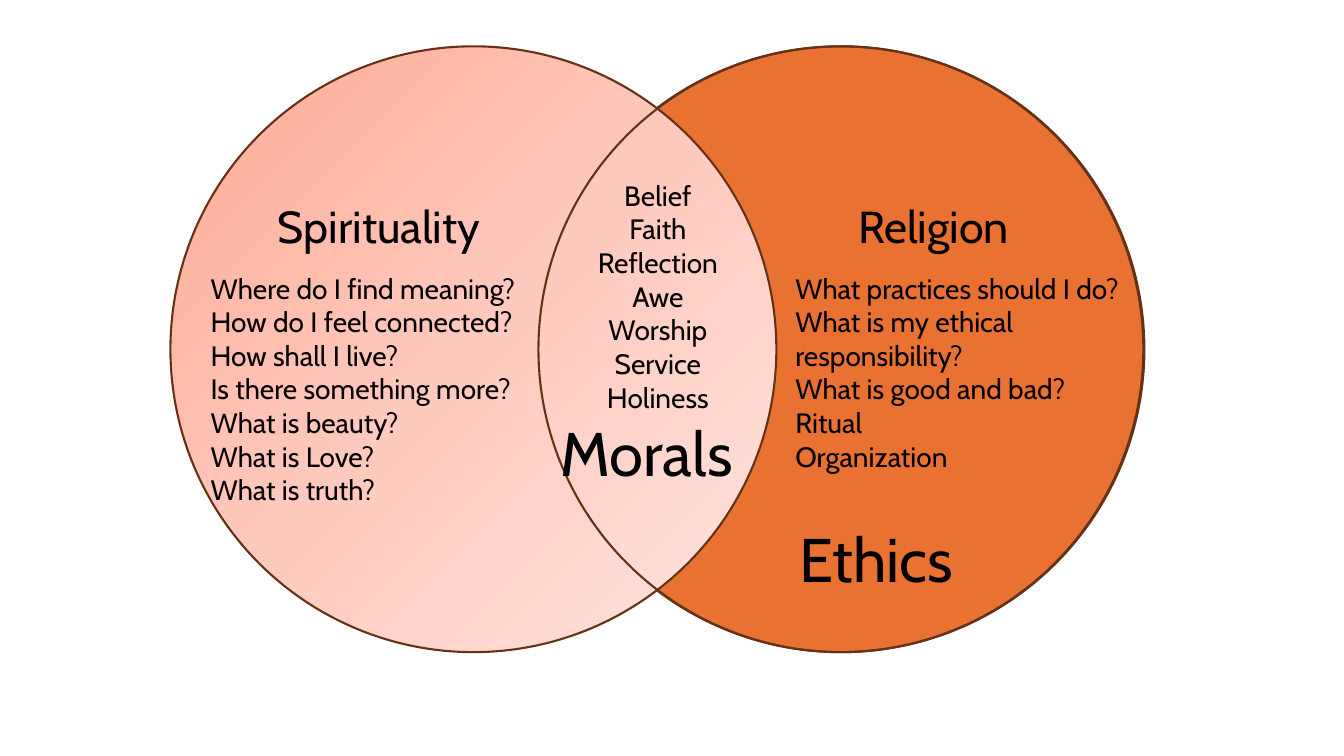
from lxml import etree
from pptx import Presentation
from pptx.dml.color import RGBColor
from pptx.enum.shapes import MSO_SHAPE
from pptx.enum.text import MSO_AUTO_SIZE, PP_ALIGN
from pptx.oxml.ns import qn
from pptx.util import Pt

PX = 9144  # EMU per px, 100 px to the inch
OVAL = MSO_SHAPE.OVAL
LEFT, CENTER = PP_ALIGN.LEFT, PP_ALIGN.CENTER
GROW = MSO_AUTO_SIZE.SHAPE_TO_FIT_TEXT

COLORS = {
    "religion": "E97132",
    "outline": "663216",
    "text": "000000",
    "glow_dark": "FFAA94",
    "glow_mid": "FFCABE",
    "glow_light": "FFE4DF",
}
GLOW = [(0, "glow_dark"), (50, "glow_mid"), (100, "glow_light")]


class Venn:
    font = "Cabin"
    diameter = 601
    top = 46

    def __init__(self, slide):
        self.s = slide

    def color(self, name):
        return RGBColor.from_string(COLORS[name])

    def circle(self, left, fill=None, stops=None):
        size = self.diameter * PX
        sp = self.s.shapes.add_shape(OVAL, left * PX, self.top * PX, size, size)
        sp.shadow.inherit = False
        sp.line.color.rgb = self.color("outline")
        sp.line.width = Pt(1.5)
        if fill:
            sp.fill.solid()
            sp.fill.fore_color.rgb = self.color(fill)
        else:
            sp.fill.background()
        if stops:
            self.radial(sp, stops)

    def radial(self, sp, stops):
        """Gradient spreading from the top left corner."""
        grad = etree.Element(qn("a:gradFill"), rotWithShape="1")
        gs_list = etree.SubElement(grad, qn("a:gsLst"))
        for percent, name in stops:
            gs = etree.SubElement(gs_list, qn("a:gs"), pos=str(percent * 1000))
            etree.SubElement(gs, qn("a:srgbClr"), val=COLORS[name])
        path = etree.SubElement(grad, qn("a:path"), path="circle")
        etree.SubElement(path, qn("a:fillToRect"), r="100000", b="100000")
        sppr = sp._element.spPr
        sppr.replace(sppr.find(qn("a:noFill")), grad)

    def text(self, box, lines, size, align=LEFT):
        tf = self.s.shapes.add_textbox(*(v * PX for v in box)).text_frame
        tf.word_wrap = True
        tf.auto_size = GROW
        for i, line in enumerate(lines):
            p = tf.add_paragraph() if i else tf.paragraphs[0]
            p.alignment = align
            r = p.add_run()
            r.text = line
            r.font.name = self.font
            r.font.size = Pt(size)
            r.font.color.rgb = self.color("text")


def main():
    prs = Presentation()
    prs.slide_width, prs.slide_height = 1333 * PX, 750 * PX
    venn = Venn(prs.slides.add_slide(prs.slide_layouts[6]))

    # Circles: the last one redraws the hidden arc
    venn.circle(533, fill="religion")
    venn.circle(169, stops=GLOW)
    venn.circle(534)

    # Headings
    for left, heading in [(224, "Spirituality"), (774, "Religion")]:
        venn.text((left, 192, 304, 64), [heading], 32, CENTER)

    # Lists
    venn.text((199, 264, 356, 313), [
        "Where do I find meaning?",
        "How do I feel connected?",
        "How shall I live?",
        "Is there something more?",
        "What is beauty?",
        "What is Love?",
        "What is truth?",
    ], 20)
    venn.text((779, 264, 356, 212), [
        "What practices should I do?",
        "What is my ethical responsibility?",
        "What is good and bad?",
        "Ritual",
        "Organization",
    ], 20)
    venn.text((563, 172, 179, 246), [
        "Belief", "Faith", "Reflection", "Awe", "Worship", "Service", "Holiness",
    ], 20, CENTER)

    # Key words
    for left, top, word in [(783, 512, "Ethics"), (546, 407, "Morals")]:
        venn.text((left, top, 356, 84), [word], 44)

    prs.save("out.pptx")


if __name__ == "__main__":
    main()
